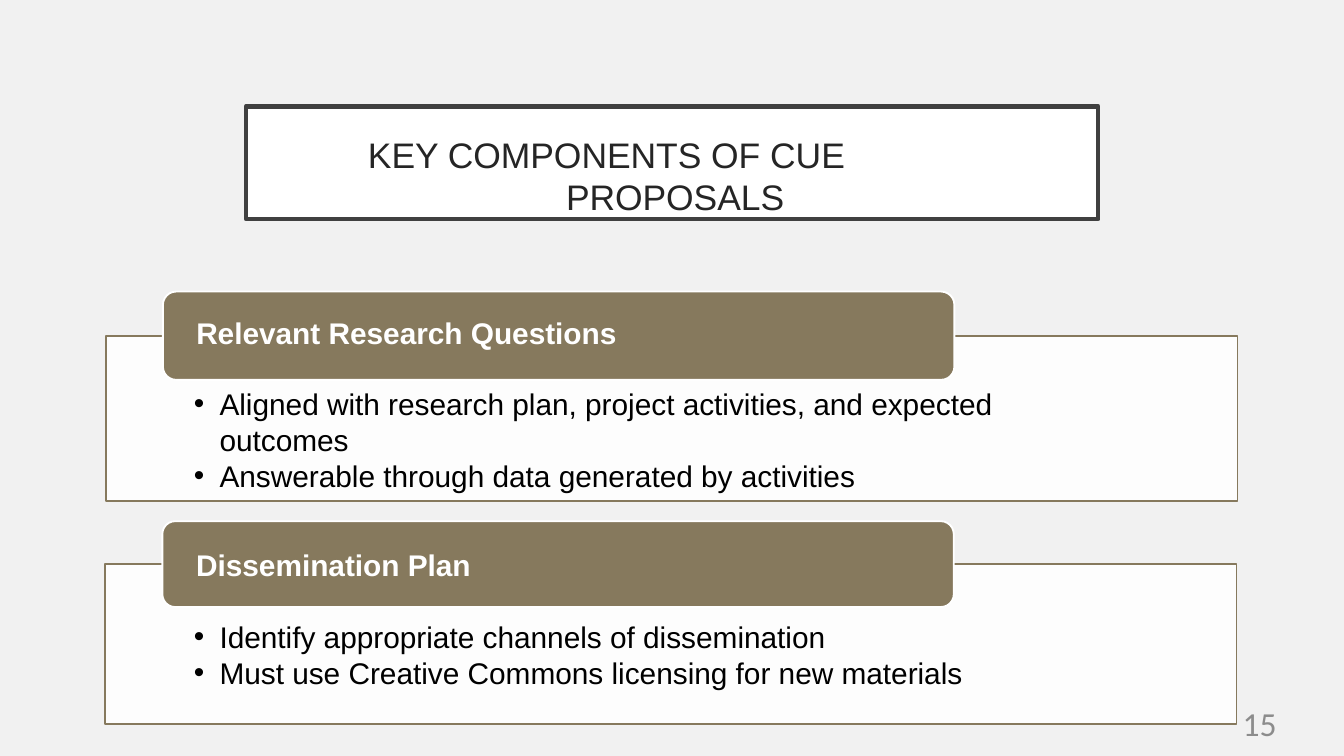
import pptx
import pptx.util
import pptx.dml.color
import pptx.enum.shapes
import pptx.enum.text
import pptx.oxml

Pt = pptx.util.Pt
ALIGN = pptx.enum.text.PP_ALIGN
ANCHOR = pptx.enum.text.MSO_ANCHOR
SHAPE = pptx.enum.shapes.MSO_SHAPE

SLIDE = (720, 405)
TITLE = "KEY COMPONENTS OF CUE\vPROPOSALS"
NUMBER = "15"
SECTIONS = [
    {
        "heading": "Relevant Research Questions",
        "items": [
            "Aligned with research plan, project activities, and expected outcomes",
            "Answerable through data generated by activities",
        ],
        "card": (57, 180, 606, 88.6),
        "tab": (87.3, 156.2, 424, 47.3),
        "list_inset": (46.9, 26.5, 70.1, 0),
        "tab_inset": (15.8, 0, 0, 3.6),
    },
    {
        "heading": "Dissemination Plan",
        "items": [
            "Identify appropriate channels of dissemination",
            "Must use Creative Commons licensing for new materials",
        ],
        "card": (56.4, 302.2, 606, 85.7),
        "tab": (87, 279.2, 424, 46),
        "list_inset": (47.5, 29.2, 83.7, 0),
        "tab_inset": (16.1, 1, 0, 0),
    },
]


def rgb(color):
    return pptx.dml.color.RGBColor.from_string(color)


def place(sp, box):
    sp.left, sp.top, sp.width, sp.height = map(Pt, box)


def paint(sp, fill, line=None, width=0):
    sp.fill.solid()
    sp.fill.fore_color.rgb = rgb(fill)
    if line:
        sp.line.color.rgb = rgb(line)
        sp.line.width = Pt(width)
    else:
        sp.line.fill.background()


def add_shape(s, kind, box):
    sp = s.shapes.add_shape(kind, *map(Pt, box))
    sp.shadow.inherit = False
    return sp


def format_text(sp, inset, size, color, align=ALIGN.LEFT, anchor=ANCHOR.TOP,
                bold=False, font="Arial", spacing=None, indent=None):
    tf = sp.text_frame
    tf.word_wrap = True
    tf.auto_size = pptx.enum.text.MSO_AUTO_SIZE.NONE
    tf.vertical_anchor = anchor
    tf.margin_left, tf.margin_top, tf.margin_right, tf.margin_bottom = map(Pt, inset)
    for p in tf.paragraphs:
        p.alignment = align
        p.space_before = Pt(0)
        if spacing:
            p.line_spacing = Pt(spacing)
        if indent:
            pPr = p._p.get_or_add_pPr()
            pPr.set("marL", str(Pt(indent[0])))
            pPr.set("indent", str(Pt(indent[1])))
        for r in p.runs:
            r.font.name = font
            r.font.size = Pt(size)
            r.font.bold = bold
            r.font.color.rgb = rgb(color)


def set_opacity(sp, percent):
    clr = sp.fill._xPr.find(".//" + pptx.oxml.ns.qn("a:srgbClr"))
    alpha = pptx.oxml.parse_xml(
        f'<a:alpha {pptx.oxml.ns.nsdecls("a")} val="{percent * 1000}"/>')
    clr.append(alpha)


def add_section(s, body, section):
    place(body, section["card"])
    paint(body, "FFFFFF", "86795D", 1)
    set_opacity(body, 90)
    body.text_frame.text = "\n".join(section["items"])
    format_text(body, section["list_inset"], 16, "000000",
                spacing=19.3, indent=(13.7, -13.7))

    tab = add_shape(s, SHAPE.ROUNDED_RECTANGLE, section["tab"])
    tab.adjustments[0] = 0.15
    paint(tab, "86795D", "FFFFFF", 1)
    tab.text_frame.text = section["heading"]
    format_text(tab, section["tab_inset"], 16, "FFFFFF",
                anchor=ANCHOR.MIDDLE, bold=True)


def main():
    prs = pptx.Presentation()
    prs.slide_width, prs.slide_height = map(Pt, SLIDE)
    s = prs.slides.add_slide(prs.slide_layouts.get_by_name("Two Content"))

    backdrop = add_shape(s, SHAPE.RECTANGLE, (0, 0, *SLIDE))
    paint(backdrop, "F1F1F1")
    s.shapes._spTree.insert(2, backdrop._element)

    title = s.shapes.title
    place(title, (131.8, 56.9, 456.5, 60.5))
    paint(title, "FFFFFF", "404040", 2.5)
    title.text_frame.text = TITLE
    format_text(title, (0, 14.6, 0, 0), 19, "252525",
                spacing=22.5, indent=(171.4, -106.1))

    for idx, section in enumerate(SECTIONS, 1):
        add_section(s, s.placeholders[idx], section)

    number = s.shapes.add_textbox(*map(Pt, (518.4, 376.6, 165.6, 20.2)))
    number.text_frame.text = NUMBER
    format_text(number, (0, 0, 0, 0), 18, "8C8C8C", align=ALIGN.RIGHT, font="Calibri")

    prs.save("out.pptx")


if __name__ == "__main__":
    main()
